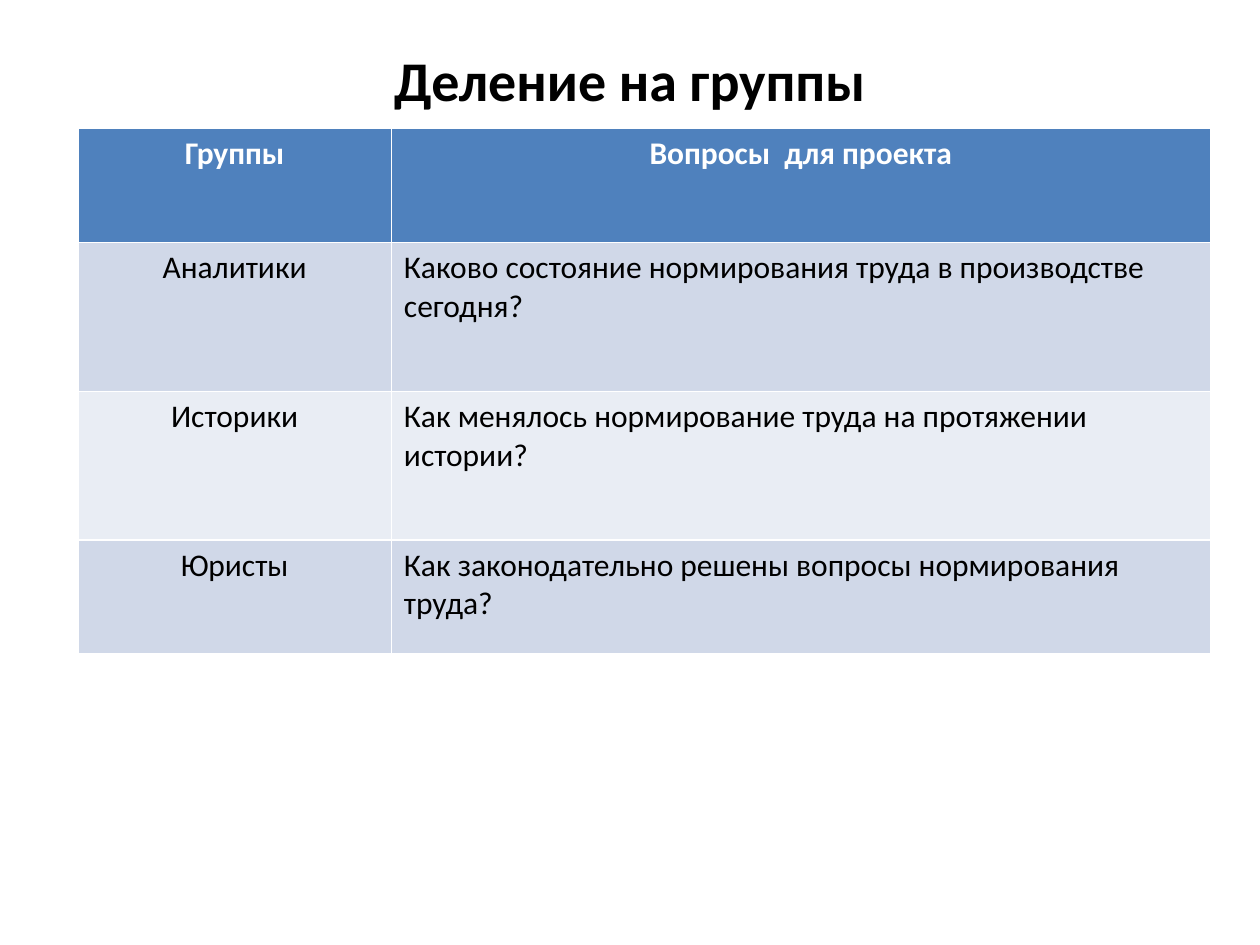
from pptx import Presentation
from pptx.dml.color import RGBColor
from pptx.enum import text
from pptx.util import Cm, Pt

# Content
HEADING = "Деление на группы"
GROUPS = [
    ("Группы", "Вопросы  для проекта"),
    ("Аналитики", "Каково состояние нормирования труда в производстве сегодня?"),
    ("Историки", "Как менялось нормирование труда на протяжении истории?"),
    ("Юристы", "Как законодательно решены вопросы нормирования труда?"),
]

# Format
COLORS = {"header": "4F81BD", "odd": "D0D8E8", "even": "E9EDF4",
          "white": "FFFFFF", "black": "000000"}
HEADING_FONT = {"name": "Calibri", "size": Pt(32), "bold": True}
HEADER_FONT = {"name": "Calibri", "size": Pt(18), "bold": True}
ANSWER_FONT = {**HEADER_FONT, "bold": False}
HEADING_BOX = {"left": Cm(1.27), "top": Cm(0.79),
               "width": Cm(22.86), "height": Cm(16.23)}
HEADING_FRAME = {"vertical_anchor": text.MSO_ANCHOR.TOP, "word_wrap": True,
                 "auto_size": text.MSO_AUTO_SIZE.NONE}
COLUMN_WIDTHS = [Cm(6.32), Cm(16.51)]
ROW_HEIGHTS = [Cm(2.3), Cm(3), Cm(3), Cm(2.3)]


def apply(target, values):
    for name, value in values.items():
        setattr(target, name, value)


def write(paragraph, words, font, color, align):
    run = paragraph.add_run()
    run.text = words
    apply(run.font, font)
    run.font.color.rgb = RGBColor.from_string(COLORS[color])
    paragraph.alignment = align


deck = Presentation()
apply(deck, {"slide_width": Cm(25.4), "slide_height": Cm(19.05)})
slide = deck.slides.add_slide(deck.slide_layouts.get_by_name("Title Only"))
CENTER, LEFT = text.PP_ALIGN.CENTER, text.PP_ALIGN.LEFT

# Heading
heading = slide.shapes.title
apply(heading, HEADING_BOX)
apply(heading.text_frame, HEADING_FRAME)
write(heading.text_frame.paragraphs[0], HEADING, HEADING_FONT, "black", CENTER)

# Table of groups; the default table style draws the white rules
groups = slide.shapes.add_table(
    len(GROUPS), len(COLUMN_WIDTHS), Cm(1.57), Cm(2.59),
    sum(COLUMN_WIDTHS), sum(ROW_HEIGHTS)).table
for column, width in zip(groups.columns, COLUMN_WIDTHS):
    column.width = width
for row, height in zip(groups.rows, ROW_HEIGHTS):
    row.height = height

for r, entry in enumerate(GROUPS):
    is_header = r == 0
    band = "header" if is_header else ("odd" if r % 2 else "even")
    for c, words in enumerate(entry):
        cell = groups.cell(r, c)
        cell.fill.solid()
        cell.fill.fore_color.rgb = RGBColor.from_string(COLORS[band])
        write(cell.text_frame.paragraphs[0], words,
              HEADER_FONT if is_header else ANSWER_FONT,
              "white" if is_header else "black",
              CENTER if is_header or c == 0 else LEFT)

deck.save("out.pptx")
